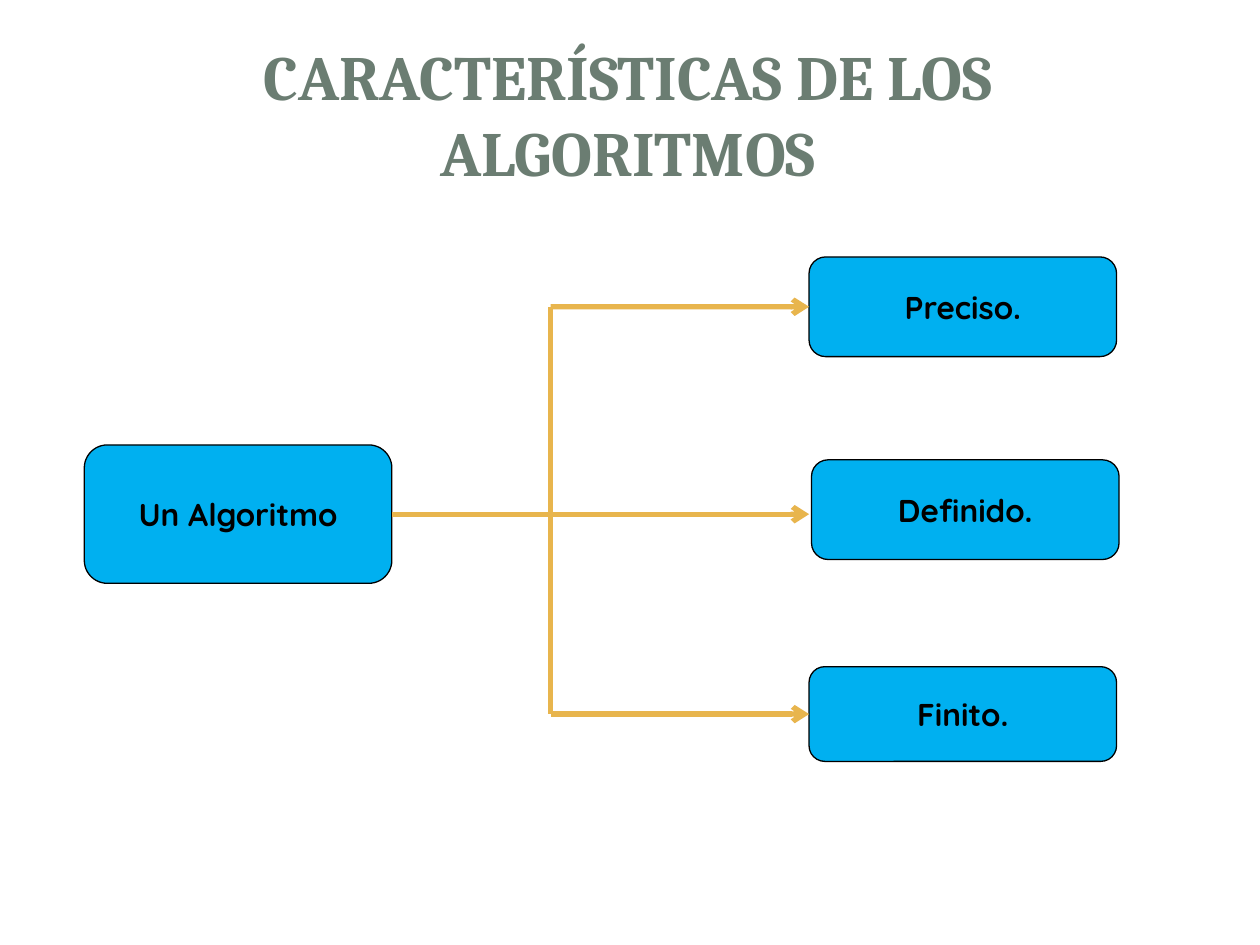
from dataclasses import dataclass
from typing import Optional

from pptx import Presentation
from pptx.dml.color import RGBColor
from pptx.enum.shapes import MSO_CONNECTOR, MSO_SHAPE
from pptx.enum.text import MSO_ANCHOR, PP_ALIGN
from pptx.oxml.ns import qn
from pptx.util import Cm, Pt
from lxml.etree import SubElement

BLUE = RGBColor(0x00, 0xB0, 0xF0)
BLACK = RGBColor(0x00, 0x00, 0x00)
GOLD = RGBColor(0xE8, 0xB5, 0x4D)
SAGE = RGBColor(0x6B, 0x7D, 0x72)

BOX_WIDTH = 6.2
TRUNK_X = 11.1
ARROW_END_X = 16.31


@dataclass
class Box:
    text: str
    left: float
    top: float
    height: float

    @property
    def middle(self) -> float:
        return self.top + self.height / 2

    @property
    def right(self) -> float:
        return self.left + BOX_WIDTH


SOURCE = Box("Un Algoritmo", 1.7, 8.97, 2.79)
PRECISE = Box("Preciso.", ARROW_END_X, 5.18, 2.01)
DEFINED = Box("Definido.", 16.36, 9.27, 2.01)
FINITE = Box("Finito.", ARROW_END_X, 13.44, 1.91)


def write_text(sp, text: str, *, font: str, size: float, color: RGBColor) -> None:
    tf = sp.text_frame
    tf.word_wrap = True
    tf.vertical_anchor = MSO_ANCHOR.MIDDLE
    p = tf.paragraphs[0]
    p.alignment = PP_ALIGN.CENTER
    r = p.add_run()
    r.text = text
    r.font.name = font
    r.font.size = Pt(size)
    r.font.bold = True
    r.font.color.rgb = color


def draw_box(s, box: Box):
    sp = s.shapes.add_shape(
        MSO_SHAPE.FLOWCHART_ALTERNATE_PROCESS,
        Cm(box.left), Cm(box.top), Cm(BOX_WIDTH), Cm(box.height),
    )
    sp.shadow.inherit = False
    sp.fill.solid()
    sp.fill.fore_color.rgb = BLUE
    sp.line.color.rgb = BLACK
    sp.line.width = Pt(0.75)
    write_text(sp, box.text, font="Quicksand", size=18, color=BLACK)
    return sp


def draw_line(s, x1: float, y1: float, x2: float, y2: float, *,
              arrow: bool = True, start: Optional[object] = None,
              end: Optional[object] = None) -> None:
    line = s.shapes.add_connector(
        MSO_CONNECTOR.STRAIGHT, Cm(x1), Cm(y1), Cm(x2), Cm(y2)
    )
    line.line.color.rgb = GOLD
    line.line.width = Pt(3)
    if arrow:
        SubElement(line.line._get_or_add_ln(), qn("a:tailEnd"), type="arrow")
    SubElement(line._element.spPr, qn("a:effectLst"))
    if start is not None:
        line.begin_connect(start, 3)
    if end is not None:
        line.end_connect(end, 1)


def main() -> None:
    prs = Presentation()
    prs.slide_width = Cm(25.4)
    prs.slide_height = Cm(19.05)
    s = prs.slides.add_slide(prs.slide_layouts[6])

    title = s.shapes.add_textbox(Cm(1.19), Cm(0.53), Cm(22.94), Cm(3.51))
    write_text(title, "CARACTERÍSTICAS DE LOS ALGORITMOS",
               font="Cambria", size=36, color=SAGE)

    source = draw_box(s, SOURCE)
    draw_line(s, SOURCE.right, SOURCE.middle, ARROW_END_X, SOURCE.middle,
              start=source)
    draw_line(s, TRUNK_X, PRECISE.middle, TRUNK_X, FINITE.middle, arrow=False)
    draw_box(s, DEFINED)
    for box in (PRECISE, FINITE):
        sp = draw_box(s, box)
        draw_line(s, TRUNK_X, box.middle, box.left, box.middle, end=sp)

    prs.save("out.pptx")


if __name__ == "__main__":
    main()
